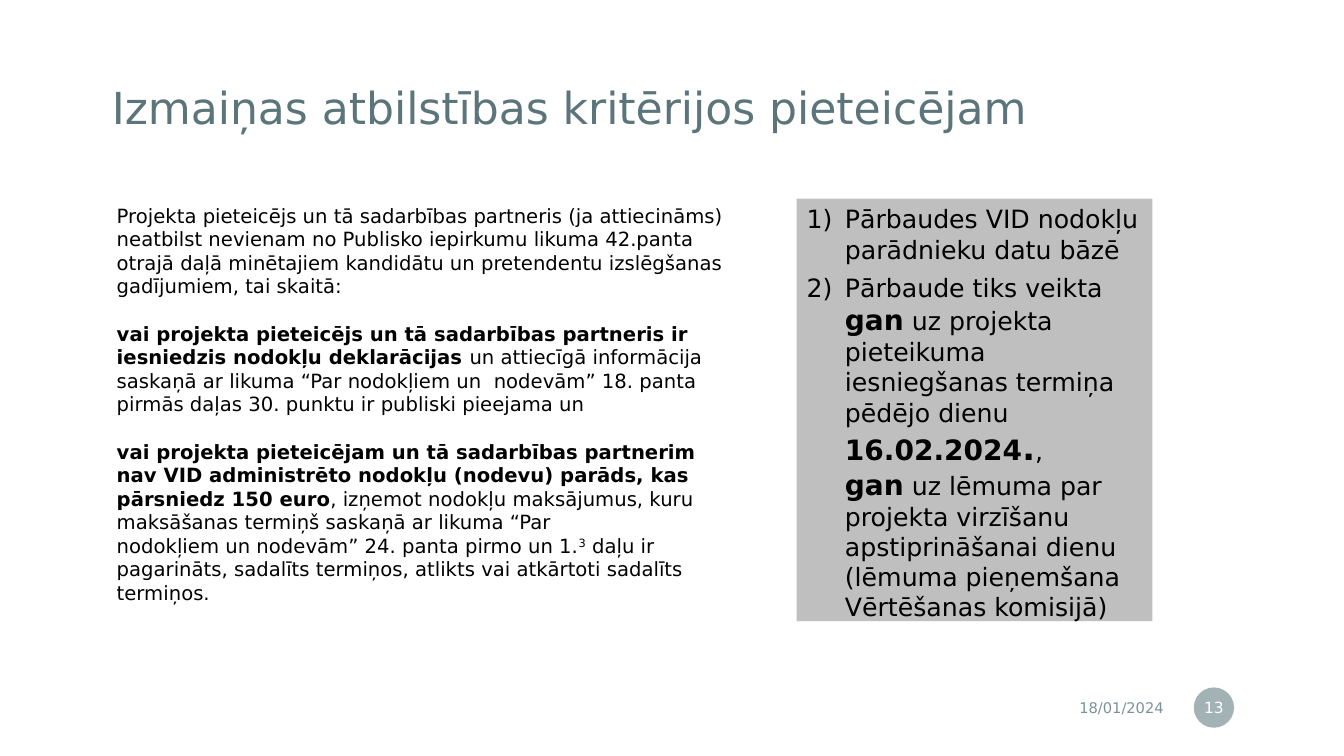
from dataclasses import dataclass

from lxml.etree import SubElement
from pptx import Presentation
from pptx.dml.color import RGBColor
from pptx.enum.shapes import MSO_SHAPE
from pptx.enum.text import MSO_ANCHOR, MSO_AUTO_SIZE, PP_ALIGN
from pptx.oxml.ns import qn
from pptx.text.text import TextFrame, _Paragraph
from pptx.util import Emu, Pt

PX = 9144  # EMU per px, 100 px to the inch


@dataclass(frozen=True)
class Theme:
    font: str = "DejaVu Sans"
    title: RGBColor = RGBColor(0x5B, 0x75, 0x7A)
    accent: RGBColor = RGBColor(0x7C, 0x93, 0x96)
    panel: RGBColor = RGBColor(0xBF, 0xBF, 0xBF)
    black: RGBColor = RGBColor(0, 0, 0)
    white: RGBColor = RGBColor(255, 255, 255)
    title_size: float = 31.5
    criteria_size: float = 14
    check_size: float = 18
    strong_size: float = 20
    stop_size: float = 24
    date_size: float = 10.5
    number_size: float = 11


@dataclass(frozen=True)
class Box:
    left: int
    top: int
    width: int
    height: int

    def emu(self) -> list[Emu]:
        return [Emu(n * PX) for n in (self.left, self.top, self.width, self.height)]


@dataclass(frozen=True)
class Span:
    text: str
    bold: bool = False
    size: float | None = None
    superscript: bool = False


THEME = Theme()
TITLE_BOX = Box(91, 48, 1018, 123)
CRITERIA_BOX = Box(106, 197, 624, 411)
CHECKS_BOX = Box(790, 197, 353, 429)
DATE_BOX = Box(863, 684, 301, 35)
NUMBER_BOX = Box(1184, 682, 40, 40)
LIST_INDENT = 38

CRITERIA = [
    [Span("Projekta pieteicējs un tā sadarbības partneris (ja attiecināms) neatbilst "
          "nevienam no Publisko iepirkumu likuma 42.panta otrajā daļā minētajiem "
          "kandidātu un pretendentu izslēgšanas gadījumiem, tai skaitā:")],
    [Span("vai projekta pieteicējs un tā sadarbības partneris ir iesniedzis nodokļu "
          "deklarācijas ", bold=True),
     Span("un attiecīgā informācija saskaņā ar likuma “Par nodokļiem un  nodevām” "
          "18. panta pirmās daļas 30. punktu ir publiski pieejama un")],
    [Span("vai projekta pieteicējam un tā sadarbības partnerim nav VID administrēto "
          "nodokļu (nodevu) parāds, kas pārsniedz 150 euro", bold=True),
     Span(", izņemot nodokļu maksājumus, kuru maksāšanas termiņš saskaņā ar likuma “Par\v"
          "nodokļiem un nodevām” 24. panta pirmo un 1."),
     Span("3", superscript=True),
     Span(" daļu ir pagarināts, sadalīts termiņos, atlikts vai atkārtoti sadalīts "
          "termiņos.")],
]
CHECKS = [
    [Span("Pārbaudes VID nodokļu parādnieku datu bāzē")],
    [Span("Pārbaude tiks veikta "),
     Span("gan", True, THEME.strong_size),
     Span(" uz projekta pieteikuma iesniegšanas termiņa pēdējo dienu "),
     Span("16.02.2024", True, THEME.strong_size),
     Span(".", True, THEME.stop_size),
     Span(",\v"),
     Span("gan", True, THEME.strong_size),
     Span(" uz lēmuma par projekta virzīšanu apstiprināšanai dienu (lēmuma "
          "pieņemšana Vērtēšanas komisijā)")],
]


def place(shape, box: Box) -> None:
    shape.left, shape.top, shape.width, shape.height = box.emu()


def style(paragraph: _Paragraph, size: float, color: RGBColor) -> None:
    paragraph.font.name = THEME.font
    paragraph.font.size = Pt(size)
    paragraph.font.color.rgb = color


def number_item(paragraph: _Paragraph) -> None:
    """Give the paragraph a "1)" number and a hanging indent."""
    properties = paragraph._p.get_or_add_pPr()
    properties.set("marL", str(LIST_INDENT * PX))
    properties.set("indent", str(-LIST_INDENT * PX))
    SubElement(properties, qn("a:buFont"), typeface="+mj-lt")
    SubElement(properties, qn("a:buAutoNum"), type="arabicParenR")


def write_paragraphs(frame: TextFrame, items: list[list[Span]], size: float,
                     gap: float, numbered: bool = False) -> None:
    frame.word_wrap = True
    frame.auto_size = MSO_AUTO_SIZE.SHAPE_TO_FIT_TEXT
    for index, spans in enumerate(items):
        paragraph = frame.add_paragraph() if index else frame.paragraphs[0]
        if numbered:
            number_item(paragraph)
        paragraph.space_before = Pt(gap if index else 0)
        style(paragraph, size, THEME.black)
        for span in spans:
            # A vertical tab marks a line break inside the paragraph.
            for part, text in enumerate(span.text.split("\v")):
                if part:
                    paragraph.add_line_break()
                if not text:
                    continue
                run = paragraph.add_run()
                run.text = text
                if span.bold:
                    run.font.bold = True
                if span.size:
                    run.font.size = Pt(span.size)
                if span.superscript:
                    run.font._element.set("baseline", "30000")


def write_label(frame: TextFrame, text: str, size: float, color: RGBColor,
                alignment: PP_ALIGN) -> None:
    frame.word_wrap = True
    frame.vertical_anchor = MSO_ANCHOR.MIDDLE
    paragraph = frame.paragraphs[0]
    paragraph.text = text
    paragraph.alignment = alignment
    style(paragraph, size, color)


def add_title(slide) -> None:
    title = slide.shapes.title
    place(title, TITLE_BOX)
    frame = title.text_frame
    frame.margin_left = frame.margin_right = Emu(20 * PX)
    frame.margin_top = frame.margin_bottom = Emu(20 * PX)
    write_label(frame, "Izmaiņas atbilstības kritērijos pieteicējam",
                THEME.title_size, THEME.title, PP_ALIGN.LEFT)
    frame.auto_size = MSO_AUTO_SIZE.NONE
    frame.paragraphs[0].line_spacing = 0.9


def add_checks(slide) -> None:
    checks = slide.placeholders[1]
    place(checks, CHECKS_BOX)
    checks.fill.solid()
    checks.fill.fore_color.rgb = THEME.panel
    write_paragraphs(checks.text_frame, CHECKS, THEME.check_size, gap=6, numbered=True)


def add_slide_number(slide) -> None:
    badge = slide.shapes.add_shape(MSO_SHAPE.OVAL, *NUMBER_BOX.emu())
    badge.shadow.inherit = False
    badge.line.fill.background()
    badge.fill.solid()
    badge.fill.fore_color.rgb = THEME.accent
    color = badge._element.spPr.find(qn("a:solidFill")).find(qn("a:srgbClr"))
    SubElement(color, qn("a:alpha"), val="70000")
    frame = badge.text_frame
    frame.margin_left = frame.margin_right = Emu(2 * PX)
    write_label(frame, "13", THEME.number_size, THEME.white, PP_ALIGN.CENTER)


def main() -> None:
    presentation = Presentation()
    presentation.slide_width = Emu(1333 * PX)
    presentation.slide_height = Emu(750 * PX)
    slide = presentation.slides.add_slide(presentation.slide_layouts[1])
    add_title(slide)
    criteria = slide.shapes.add_textbox(*CRITERIA_BOX.emu())
    write_paragraphs(criteria.text_frame, CRITERIA, THEME.criteria_size, gap=17)
    add_checks(slide)
    date = slide.shapes.add_textbox(*DATE_BOX.emu())
    write_label(date.text_frame, "18/01/2024", THEME.date_size, THEME.accent,
                PP_ALIGN.RIGHT)
    add_slide_number(slide)
    presentation.save("out.pptx")


if __name__ == "__main__":
    main()
